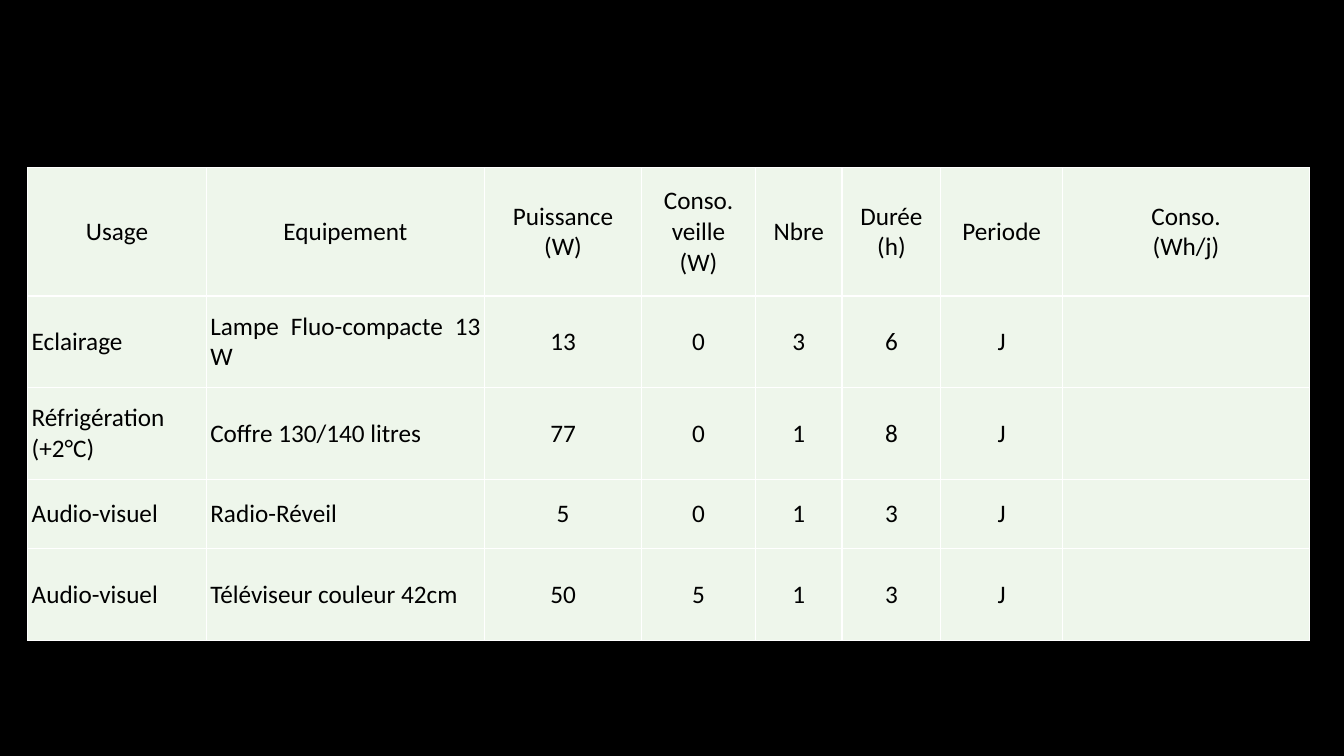
"""Build a slide with a table of household power use."""
from lxml import etree
from pptx import Presentation
from pptx.dml.color import RGBColor
from pptx.enum.text import MSO_ANCHOR, PP_ALIGN
from pptx.oxml.ns import qn
from pptx.util import Cm, Pt

BLACK = RGBColor(0, 0, 0)
WHITE = RGBColor(255, 255, 255)
GREEN = RGBColor(0xEE, 0xF6, 0xEB)
CENTER = PP_ALIGN.CENTER
JUSTIFY = PP_ALIGN.JUSTIFY
MIDDLE = MSO_ANCHOR.MIDDLE

WIDTHS = [4.5, 7.01, 3.96, 2.87, 2.18, 2.49, 3.07, 6.22]
HEIGHTS = [3.23, 2.31, 2.31, 1.75, 2.31]
ROWS = [
    ["Usage", "Equipement", "Puissance\n(W)", "Conso.\nveille\n(W)",
     "Nbre", "Durée\n(h)", "Periode", "Conso.\n(Wh/j)"],
    ["Eclairage", "Lampe Fluo-compacte 13 W", "13", "0", "3", "6", "J", ""],
    ["Réfrigération (+2°C)", "Coffre 130/140 litres",
     "77", "0", "1", "8", "J", ""],
    ["Audio-visuel", "Radio-Réveil", "5", "0", "1", "3", "J", ""],
    ["Audio-visuel", "Téléviseur couleur 42cm",
     "50", "5", "1", "3", "J", ""],
]


def write(frame, text, size=18, color=BLACK, align=CENTER, font="Calibri"):
    """Put formatted text in the first paragraph of a frame."""
    para = frame.paragraphs[0]
    para.text = text
    para.alignment = align
    for run in para.runs:
        run.font.name = font
        run.font.size = Pt(size)
        run.font.color.rgb = color


def border(cell, color=WHITE, width=1):
    """Draw a line on all four sides of a cell."""
    props = cell._tc.get_or_add_tcPr()
    for side in ("lnL", "lnR", "lnT", "lnB"):
        line = etree.SubElement(props, qn(f"a:{side}"), w=str(Pt(width)))
        fill = etree.SubElement(line, qn("a:solidFill"))
        etree.SubElement(fill, qn("a:srgbClr"), val=str(color))


def style(cell):
    """Give a cell its margins, borders and fill."""
    cell.margin_left = cell.margin_right = Cm(0.1)
    cell.margin_top = cell.margin_bottom = Cm(0.1)
    cell.vertical_anchor = MIDDLE
    border(cell)
    cell.fill.solid()
    cell.fill.fore_color.rgb = GREEN


def add_grid(slide, left, top):
    """Add the table and fill it with the rows of values."""
    table = slide.shapes.add_table(
        len(ROWS), len(WIDTHS), Cm(left), Cm(top),
        Cm(sum(WIDTHS)), Cm(sum(HEIGHTS))).table
    for col, width in zip(table.columns, WIDTHS):
        col.width = Cm(width)
    for row, height in zip(table.rows, HEIGHTS):
        row.height = Cm(height)
    for y, row in enumerate(ROWS):
        for x, text in enumerate(row):
            cell = table.cell(y, x)
            style(cell)
            align = JUSTIFY if y > 0 and x < 2 else CENTER
            write(cell.text_frame, text, align=align)


def main():
    """Build and save the slide."""
    deck = Presentation()
    deck.slide_width = Cm(33.87)
    deck.slide_height = Cm(19.05)
    slide = deck.slides.add_slide(deck.slide_layouts[6])
    slide.background.fill.solid()
    slide.background.fill.fore_color.rgb = BLACK
    add_grid(slide, 0.7, 4.23)
    deck.save("out.pptx")


if __name__ == "__main__":
    main()
